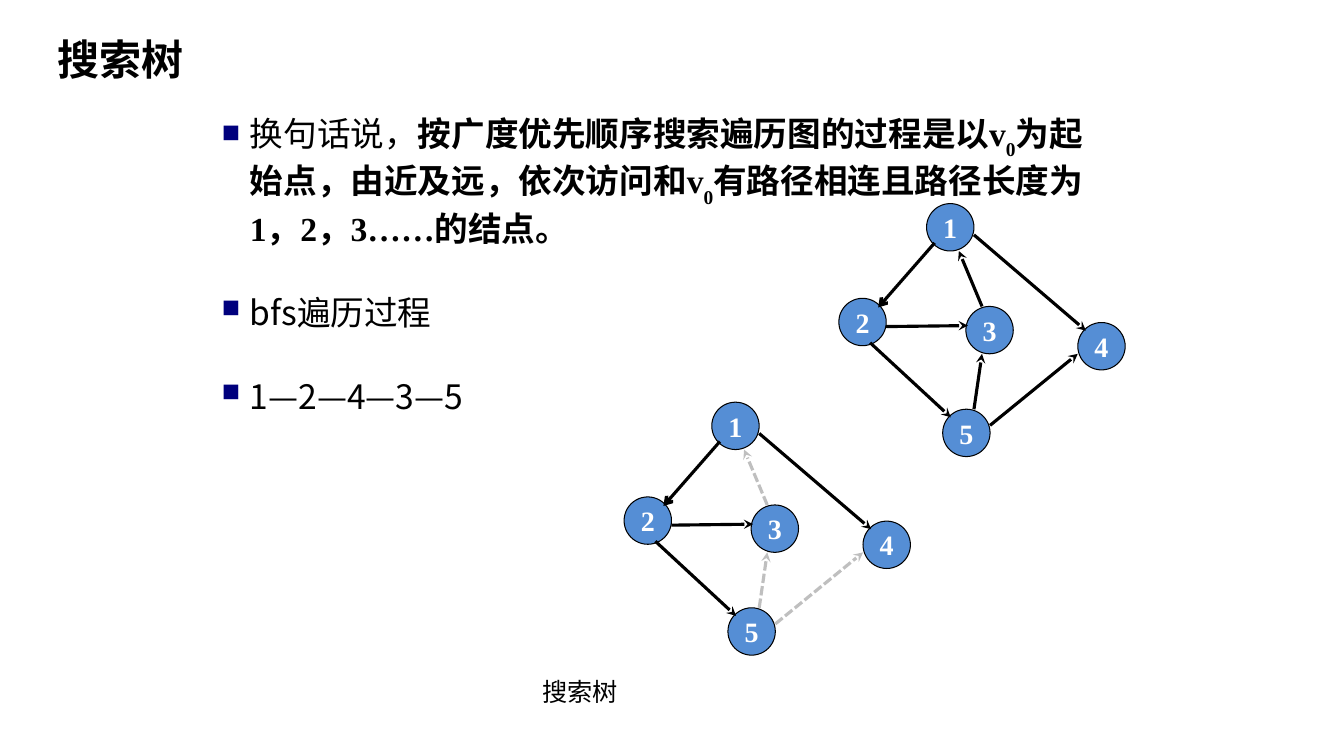
from dataclasses import dataclass

import pptx
import pptx.dml.color
import pptx.enum.dml
import pptx.enum.shapes
import pptx.enum.text
import pptx.oxml.ns
import pptx.util
from lxml import etree
from pptx.dml.color import RGBColor
from pptx.util import Inches

BLACK = RGBColor(0x00, 0x00, 0x00)
WHITE = RGBColor(0xFF, 0xFF, 0xFF)
NODE_BLUE = RGBColor(0x55, 0x8E, 0xD5)
UNUSED_GREY = RGBColor(0xBF, 0xBF, 0xBF)
BULLET_NAVY = RGBColor(0x00, 0x00, 0x7D)

SERIF = "Times New Roman"
SANS = "Noto Sans CJK SC"
NODE_SIZE = 0.47


@dataclass(frozen=True)
class Node:
    label: str
    left: float
    top: float


@dataclass(frozen=True)
class Edge:
    start: tuple[float, float]
    end: tuple[float, float]
    in_tree: bool = True
    arrowhead: str = "stealth"


@dataclass(frozen=True)
class Graph:
    left: float
    top: float
    is_search_tree: bool


@dataclass(frozen=True)
class Piece:
    text: str
    bold: bool = False
    subscript: bool = False
    font: str = SERIF


# Nodes and edges, measured from the top left of a graph
NODES = [
    Node("1", 0.87, 0),
    Node("2", 0, 0.94),
    Node("5", 1.03, 2.04),
    Node("3", 1.26, 1.02),
    Node("4", 2.37, 1.18),
]
EDGES = [
    Edge((0.95, 0.39), (0.39, 1.03), arrowhead="arrow"),
    Edge((1.42, 1.02), (1.19, 0.47), in_tree=False),
    Edge((0.31, 1.38), (1.11, 2.12)),
    Edge((0.47, 1.22), (1.28, 1.21)),
    Edge((1.34, 0.31), (2.45, 1.26)),
    Edge((1.5, 2.2), (2.37, 1.49), in_tree=False),
    Edge((1.34, 2.04), (1.42, 1.49), in_tree=False),
]
GRAPHS = [Graph(6.19, 3.99, True), Graph(8.32, 2.02, False)]

BULLETS = [
    [
        Piece("换句话说，"),
        Piece("按广度优先顺序搜索遍历图的过程是以v", bold=True),
        Piece("0", bold=True, subscript=True),
        Piece("为起始点，由近及远，依次访问和v", bold=True),
        Piece("0", bold=True, subscript=True),
        Piece("有路径相连且路径长度为1，2，3……的结点。", bold=True),
    ],
    [Piece("bfs遍历过程", font=SANS)],
    [Piece("1—2—4—3—5", font=SANS)],
]


def add_xml(parent, tag: str, **attributes: str):
    return etree.SubElement(parent, pptx.oxml.ns.qn(tag), attributes)


def style_run(run, size: int, color: RGBColor, bold: bool, font: str) -> None:
    run.font.size = pptx.util.Pt(size)
    run.font.color.rgb = color
    run.font.bold = bold
    run.font.name = font
    add_xml(run.font._element, "a:ea", typeface=SANS)


def add_node(slide, node: Node, graph: Graph) -> None:
    circle = slide.shapes.add_shape(
        pptx.enum.shapes.MSO_SHAPE.OVAL,
        Inches(graph.left + node.left), Inches(graph.top + node.top),
        Inches(NODE_SIZE), Inches(NODE_SIZE))
    circle.shadow.inherit = False
    circle.fill.solid()
    circle.fill.fore_color.rgb = NODE_BLUE
    circle.line.color.rgb = BLACK
    circle.line.width = pptx.util.Pt(0.75)
    frame = circle.text_frame
    frame.text = node.label
    frame.word_wrap = False
    frame.vertical_anchor = pptx.enum.text.MSO_ANCHOR.MIDDLE
    frame.paragraphs[0].alignment = pptx.enum.text.PP_ALIGN.CENTER
    style_run(frame.paragraphs[0].runs[0], 20, WHITE, True, SERIF)


def add_edge(slide, edge: Edge, graph: Graph) -> None:
    (x1, y1), (x2, y2) = edge.start, edge.end
    arrow = slide.shapes.add_connector(
        pptx.enum.shapes.MSO_CONNECTOR.STRAIGHT,
        Inches(graph.left + x1), Inches(graph.top + y1),
        Inches(graph.left + x2), Inches(graph.top + y2))
    unused = graph.is_search_tree and not edge.in_tree
    arrow.line.color.rgb = UNUSED_GREY if unused else BLACK
    arrow.line.width = pptx.util.Pt(2.25)
    if unused:
        arrow.line.dash_style = pptx.enum.dml.MSO_LINE.SQUARE_DOT
    add_xml(arrow.line._get_or_add_ln(), "a:tailEnd", type=edge.arrowhead)
    add_xml(arrow._element.spPr, "a:effectLst")


def add_bullet(paragraph, pieces: list[Piece], space_before: float) -> None:
    properties = paragraph._p.get_or_add_pPr()
    indent = Inches(0.28)
    properties.set("marL", str(indent))
    properties.set("indent", str(-indent))
    color = add_xml(properties, "a:buClr")
    add_xml(color, "a:srgbClr", val=str(BULLET_NAVY))
    add_xml(properties, "a:buSzPct", val="75000")
    add_xml(properties, "a:buChar", char="■")
    paragraph.space_before = pptx.util.Pt(space_before)
    for piece in pieces:
        run = paragraph.add_run()
        run.text = piece.text
        style_run(run, 24, BLACK, piece.bold, piece.font)
        if piece.subscript:
            run.font._element.set("baseline", "-30000")


def main() -> None:
    presentation = pptx.Presentation()
    presentation.slide_width = Inches(13.33)
    presentation.slide_height = Inches(7.5)
    slide = presentation.slides.add_slide(presentation.slide_layouts[5])

    # Title
    title = slide.shapes.title
    title.left, title.top = Inches(0.47), Inches(0.11)
    title.width, title.height = Inches(12.4), Inches(0.94)
    title.text_frame.text = "搜索树"
    title.text_frame.vertical_anchor = pptx.enum.text.MSO_ANCHOR.MIDDLE
    heading = title.text_frame.paragraphs[0]
    heading.alignment = pptx.enum.text.PP_ALIGN.LEFT
    style_run(heading.runs[0], 30, BLACK, True, "Arial")

    # Explanation
    explanation = slide.shapes.add_textbox(
        Inches(2.1), Inches(1.07), Inches(9), Inches(4.76)).text_frame
    explanation.word_wrap = True
    for index, pieces in enumerate(BULLETS):
        paragraph = explanation.add_paragraph() if index else explanation.paragraphs[0]
        add_bullet(paragraph, pieces, 31 if index else 0)

    # Search tree and full graph
    for graph in GRAPHS:
        for node in NODES:
            add_node(slide, node, graph)
        for edge in EDGES:
            add_edge(slide, edge, graph)

    # Caption
    caption = slide.shapes.add_textbox(
        Inches(5.28), Inches(6.66), Inches(1.02), Inches(0.4)).text_frame
    caption.text = "搜索树"
    caption.word_wrap = True
    style_run(caption.paragraphs[0].runs[0], 18, BLACK, False, "Cambria")

    presentation.save("out.pptx")


if __name__ == "__main__":
    main()
